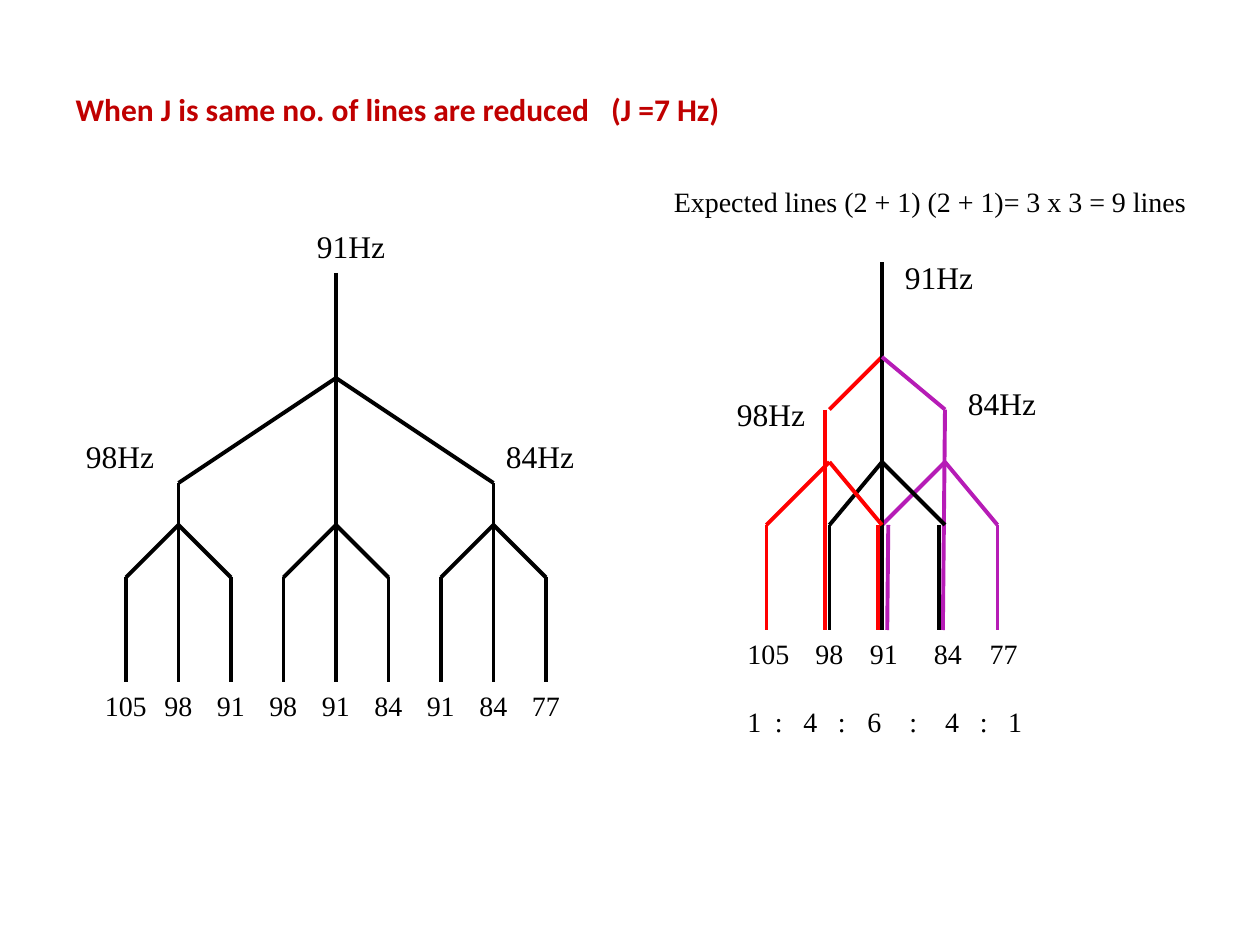
from dataclasses import dataclass
from itertools import pairwise

from lxml.etree import SubElement
from pptx import Presentation
from pptx.dml.color import RGBColor
from pptx.enum.shapes import MSO_CONNECTOR
from pptx.enum.text import MSO_ANCHOR, MSO_AUTO_SIZE, PP_ALIGN
from pptx.oxml.ns import qn
from pptx.util import Emu, Inches, Pt


@dataclass(frozen=True)
class Theme:
    black: str = "000000"
    red: str = "FF0000"
    purple: str = "B61CB6"
    title: str = "C00000"
    heading_font: str = "Calibri"
    body_font: str = "Times New Roman"
    large: int = 18
    small: int = 16
    stroke: float = 2.25


@dataclass(frozen=True)
class Label:
    text: str
    col: float
    row: float


@dataclass(frozen=True)
class Path:
    points: tuple[tuple[float, float], ...]
    color: str


THEME = Theme()
CELL = Inches(1) // 12  # the slide is a grid of 120 columns and 90 rows
INSET = 1.2  # left inset of a text frame, in columns


def cells(n: float) -> Emu:
    return Emu(round(n * CELL))


def place(sp, col: float, row: float, width: float, height: float) -> None:
    sp.left, sp.top, sp.width, sp.height = map(cells, (col, row, width, height))


def write(p, text: str, *, size: int = THEME.large, font: str = THEME.body_font,
          color: str = THEME.black, bold: bool = False, before: float = 0,
          stops: tuple[float, ...] = (), tab_align: str = "ctr") -> None:
    """Fill one paragraph; stops are tab positions in columns from the inset."""
    p.alignment = PP_ALIGN.LEFT
    p.space_before = Pt(before)
    if stops:
        tabs = SubElement(p._p.get_or_add_pPr(), qn("a:tabLst"))
        for stop in stops:
            SubElement(tabs, qn("a:tab"), pos=str(cells(stop)), algn=tab_align)
    r = p.add_run()
    r.text = text
    r.font.name, r.font.size, r.font.bold = font, Pt(size), bold
    r.font.color.rgb = RGBColor.from_string(color)


def setup_frame(sp):
    tf = sp.text_frame
    tf.word_wrap = True
    tf.auto_size = MSO_AUTO_SIZE.NONE
    tf.vertical_anchor = MSO_ANCHOR.TOP
    tf.margin_right = 0
    return tf


def add_box(slide, col: float, row: float, width: float, height: float):
    sp = slide.shapes.add_textbox(*map(cells, (col, row, width, height)))
    return setup_frame(sp)


def draw_path(slide, path: Path) -> None:
    for start, end in pairwise(path.points):
        line = slide.shapes.add_connector(
            MSO_CONNECTOR.STRAIGHT, *map(cells, (*start, *end)))
        line.line.width = Pt(THEME.stroke)
        line.line.color.rgb = RGBColor.from_string(path.color)
        SubElement(line._element.spPr, qn("a:effectLst"))


def draw_tree(slide, paths: list[Path], labels: list[Label]) -> None:
    for path in paths:
        draw_path(slide, path)
    for label in labels:
        tf = add_box(slide, label.col, label.row, 9, 4.8)
        write(tf.paragraphs[0], label.text)


def write_row(p, words: str, centers: list[float], box_col: float,
              before: float = 0) -> None:
    """Centre each word under its column with a tab stop."""
    stops = tuple(c - box_col - INSET for c in centers)
    write(p, "".join(f"\t{w}" for w in words.split()), size=THEME.small,
          before=before, stops=stops)


def full_tree(slide) -> None:
    """Draw nine separate lines."""
    root, arm, spread = 32, 15, 5
    nodes = [root - arm, root, root + arm]
    leaves = [n + d for n in nodes for d in (-spread, 0, spread)]
    paths = [Path(((root, 26), (root, 65)), THEME.black)]
    for node in nodes:
        if node != root:
            paths.append(Path(((root, 36), (node, 46), (node, 65)), THEME.black))
        paths += [Path(((node, 50), (node + d, 55), (node + d, 65)), THEME.black)
                  for d in (-spread, spread)]
    draw_tree(slide, paths, [Label("91Hz", 29, 21), Label("84Hz", 47, 41),
                             Label("98Hz", 7, 41)])
    tf = add_box(slide, 7, 65, 49, 4.4)
    write_row(tf.paragraphs[0], "105 98 91 98 91 84 91 84 77", leaves, 7)


def merged_tree(slide) -> None:
    """Draw the lines that coincide side by side."""
    black, red, purple = THEME.black, THEME.red, THEME.purple
    paths = [
        Path(((79, 39), (84, 34)), red),
        Path(((90, 44), (84, 50)), purple),
        Path(((84, 25), (84, 60)), black),
        Path(((84, 34), (90, 39), (89.8, 60)), purple),
        Path(((90, 50), (84, 44), (79, 50), (79, 60)), black),
        Path(((79, 44), (73, 50), (73, 60)), red),
        Path(((90, 44), (95, 50), (95, 60)), purple),
        Path(((89.4, 50), (89.4, 60)), black),
        Path(((84.6, 50), (84.5, 60)), purple),
        Path(((79, 44), (84, 50)), red),
        Path(((83.6, 50), (83.6, 60)), red),
        Path(((78.6, 39), (78.6, 60)), red),
    ]
    draw_tree(slide, paths, [Label("91Hz", 85, 24), Label("84Hz", 91, 36),
                             Label("98Hz", 69, 37)])
    tf = add_box(slide, 70, 60, 29, 14.2)
    write_row(tf.paragraphs[0], "105 98 91 84 77", [73.2, 79, 84.2, 90.3, 95.6], 70)
    write_row(tf.add_paragraph(), "1 : 4 : 6 : 4 : 1",
              [71.8, 74.2, 77.2, 80.2, 83.3, 87, 90.7, 93.7, 96.7], 70, before=20)


def main() -> None:
    prs = Presentation()
    prs.slide_width, prs.slide_height = Inches(10), Inches(7.5)
    slide = prs.slides.add_slide(prs.slide_layouts[5])

    title = slide.shapes.title
    place(title, 6, 8, 76, 4.8)
    write(setup_frame(title).paragraphs[0],
          "When J is same no. of lines are reduced\t(J =7 Hz)",
          font=THEME.heading_font, color=THEME.title, bold=True,
          stops=(51,), tab_align="l")

    full_tree(slide)
    merged_tree(slide)
    tf = add_box(slide, 63, 17, 52, 4.4)
    write(tf.paragraphs[0], "Expected lines (2 + 1) (2 + 1)= 3 x 3 = 9 lines",
          size=THEME.small)
    prs.save("out.pptx")


if __name__ == "__main__":
    main()
